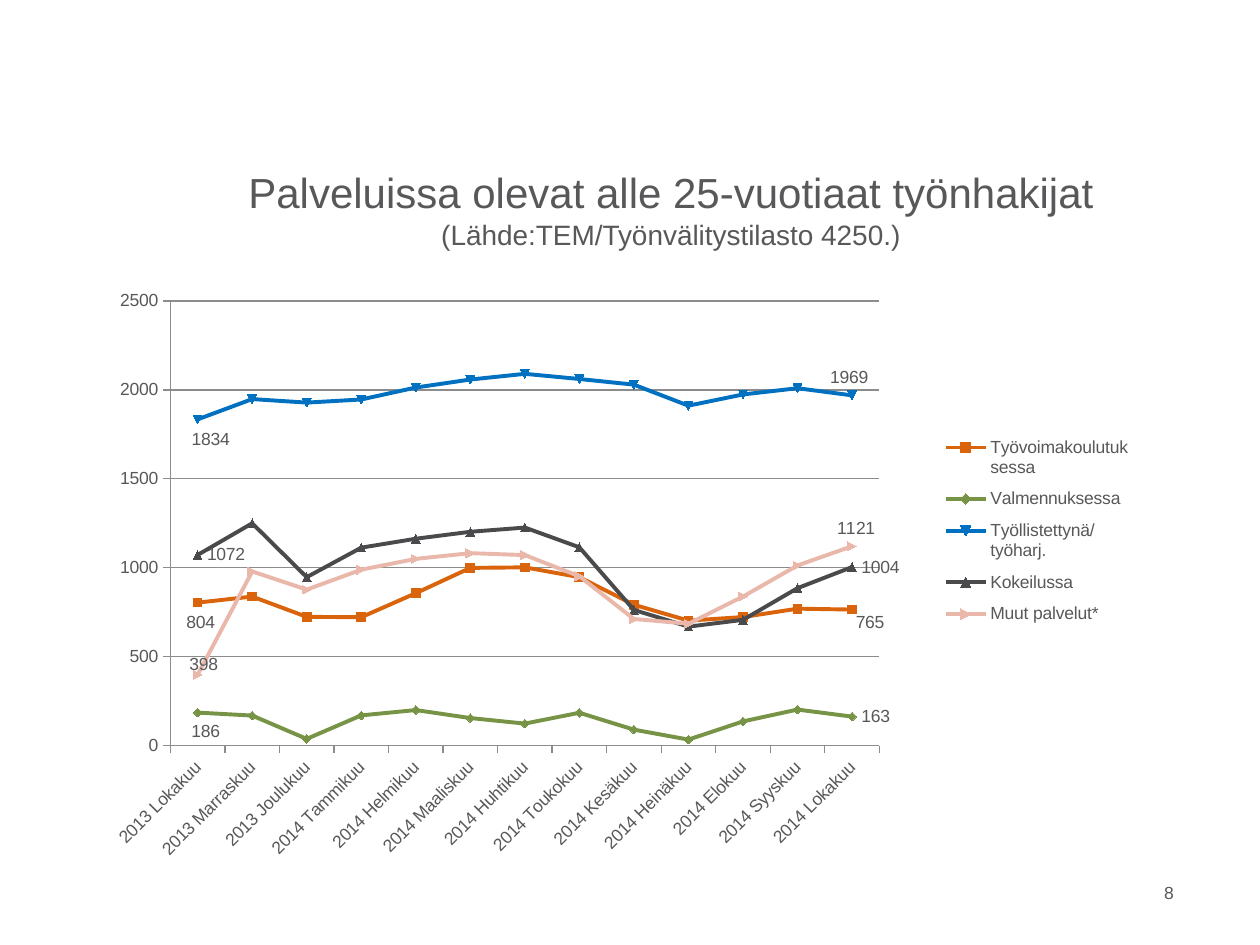
import pptx
import pptx.chart.data
import pptx.dml.color
import pptx.enum.chart
import pptx.enum.text
import pptx.oxml
import pptx.oxml.ns
import pptx.util

RGB = pptx.dml.color.RGBColor
TEXT = RGB(0x58, 0x58, 0x5A)
GRID = RGB(0x8C, 0x8C, 0x8C)
ORANGE = RGB(0xD9, 0x64, 0x0C)
GREEN = RGB(0x77, 0x93, 0x46)
BLUE = RGB(0x00, 0x70, 0xC0)
DARK = RGB(0x4A, 0x4A, 0x4C)
PINK = RGB(0xE9, 0xB8, 0xAA)
PX = 914400 / 126
CHART = (115, 283, 1022, 576)
POS = pptx.enum.chart.XL_LABEL_POSITION
ALIGN = pptx.enum.text.PP_ALIGN


def box(*px):
    """Turn px lengths into EMU."""
    return [round(v * PX) for v in px]


def manual_layout(index, parent, px, modes=""):
    """Place a chart part by px within the chart; a label's px are a shift."""
    for old in parent.findall(pptx.oxml.ns.qn("c:layout")):
        parent.remove(old)
    values = "".join(f'<c:{tag} val="{v / total}"/>'
                     for tag, v, total in zip("xywh", px, CHART[2:] * 2))
    parent.insert(index, pptx.oxml.parse_xml(
        f'<c:layout {pptx.oxml.ns.nsdecls("c")}><c:manualLayout>'
        f'{modes}{values}</c:manualLayout></c:layout>'))


prs = pptx.Presentation()
prs.slide_width, prs.slide_height = box(1260, 945)
s = prs.slides.add_slide(prs.slide_layouts[6])

# Title and page number
texts = [
    ((104, 165, 1134, 88), [("Palveluissa olevat alle 25-vuotiaat työnhakijat", 24),
                            ("(Lähde:TEM/Työnvälitystilasto 4250.)", 16)],
     ALIGN.CENTER, pptx.enum.text.MSO_ANCHOR.MIDDLE),
    ((1131, 876, 55, 50), [("8", 10)], ALIGN.RIGHT, pptx.enum.text.MSO_ANCHOR.TOP),
]
for place, lines, align, anchor in texts:
    tf = s.shapes.add_textbox(*box(*place)).text_frame
    tf.word_wrap = True
    tf.vertical_anchor = anchor
    tf.text = "\n".join(text for text, size in lines)
    for p, (text, size) in zip(tf.paragraphs, lines):
        p.alignment = align
        r = p.runs[0]
        r.font.name = "Arial"
        r.font.size = pptx.util.Pt(size)
        r.font.color.rgb = TEXT

# Line chart: name, colour, first and last label (position, shift), values
series = [
    ("Työvoimakoulutuksessa", ORANGE, (POS.BELOW, (3, 1)), (POS.BELOW, (18, -6)),
     [804, 838, 724, 722, 857, 999, 1002, 947, 792, 703, 723, 770, 765]),
    ("Valmennuksessa", GREEN, (POS.BELOW, (8, 0)), (POS.RIGHT, None),
     [186, 169, 38, 170, 200, 155, 124, 185, 90, 34, 136, 203, 163]),
    ("Työllistettynä/työharj.", BLUE, (POS.BELOW, (13, 1)), (POS.ABOVE, (-3, 1)),
     [1834, 1948, 1928, 1946, 2013, 2058, 2090, 2061, 2029, 1911, 1974, 2009, 1969]),
    ("Kokeilussa", DARK, (POS.RIGHT, None), (POS.RIGHT, None),
     [1072, 1250, 947, 1113, 1163, 1202, 1226, 1115, 763, 669, 707, 885, 1004]),
    ("Muut palvelut*", PINK, (POS.ABOVE, (6, 9)), (POS.ABOVE, (4, 2)),
     [398, 979, 877, 989, 1050, 1082, 1071, 952, 712, 685, 838, 1013, 1121]),
]
data = pptx.chart.data.CategoryChartData()
data.categories = [
    "2013 Lokakuu", "2013 Marraskuu", "2013 Joulukuu", "2014 Tammikuu",
    "2014 Helmikuu", "2014 Maaliskuu", "2014 Huhtikuu", "2014 Toukokuu",
    "2014 Kesäkuu", "2014 Heinäkuu", "2014 Elokuu", "2014 Syyskuu", "2014 Lokakuu"]
for name, color, first, last, values in series:
    data.add_series(name, values)
chart = s.shapes.add_chart(pptx.enum.chart.XL_CHART_TYPE.LINE_MARKERS,
                           *box(*CHART), data).chart
chart.has_title = False
chart.font.name = "Arial"
chart.font.size = pptx.util.Pt(10)
chart.font.color.rgb = TEXT
chart.plots[0].vary_by_categories = False

for ser, (name, color, first, last, values) in zip(chart.plots[0].series, series):
    ser.smooth = False
    ser.format.line.color.rgb = color
    ser.format.line.width = pptx.util.Pt(2.25)
    ser.marker.style = pptx.enum.chart.XL_MARKER_STYLE.AUTOMATIC
    ser.marker.size = 5
    ser.marker.format.fill.solid()
    ser.marker.format.fill.fore_color.rgb = color
    ser.marker.format.line.color.rgb = color
    ser.data_labels.show_value = False
    for i, (position, shift) in ((0, first), (len(values) - 1, last)):
        ser.points[i].data_label.position = position
        if shift:
            labels = ser.data_labels._element.findall(pptx.oxml.ns.qn("c:dLbl"))
            manual_layout(1, labels[-1], shift)

value_axis, category_axis = chart.value_axis, chart.category_axis
value_axis.minimum_scale = 0
value_axis.maximum_scale = 2500
value_axis.major_unit = 500
value_axis.has_major_gridlines = True
for axis in (value_axis, category_axis):
    axis.major_tick_mark = pptx.enum.chart.XL_TICK_MARK.OUTSIDE
    axis.tick_labels.font.size = pptx.util.Pt(10)
for part in (value_axis, category_axis, value_axis.major_gridlines):
    part.format.line.color.rgb = GRID
    part.format.line.width = pptx.util.Pt(0.75)
category_axis._element.find(".//" + pptx.oxml.ns.qn("a:bodyPr")).set("rot", "-2700000")

chart.has_legend = True
chart.legend.position = pptx.enum.chart.XL_LEGEND_POSITION.RIGHT
chart.legend.include_in_layout = False
edges = '<c:xMode val="edge"/><c:yMode val="edge"/>'
manual_layout(1, chart.legend._element, (831, 143, 190, 211), edges)
plot_area = chart._chartSpace.find(".//" + pptx.oxml.ns.qn("c:plotArea"))
manual_layout(0, plot_area, (54, 18, 710, 446), '<c:layoutTarget val="inner"/>' + edges)

prs.save("out.pptx")
